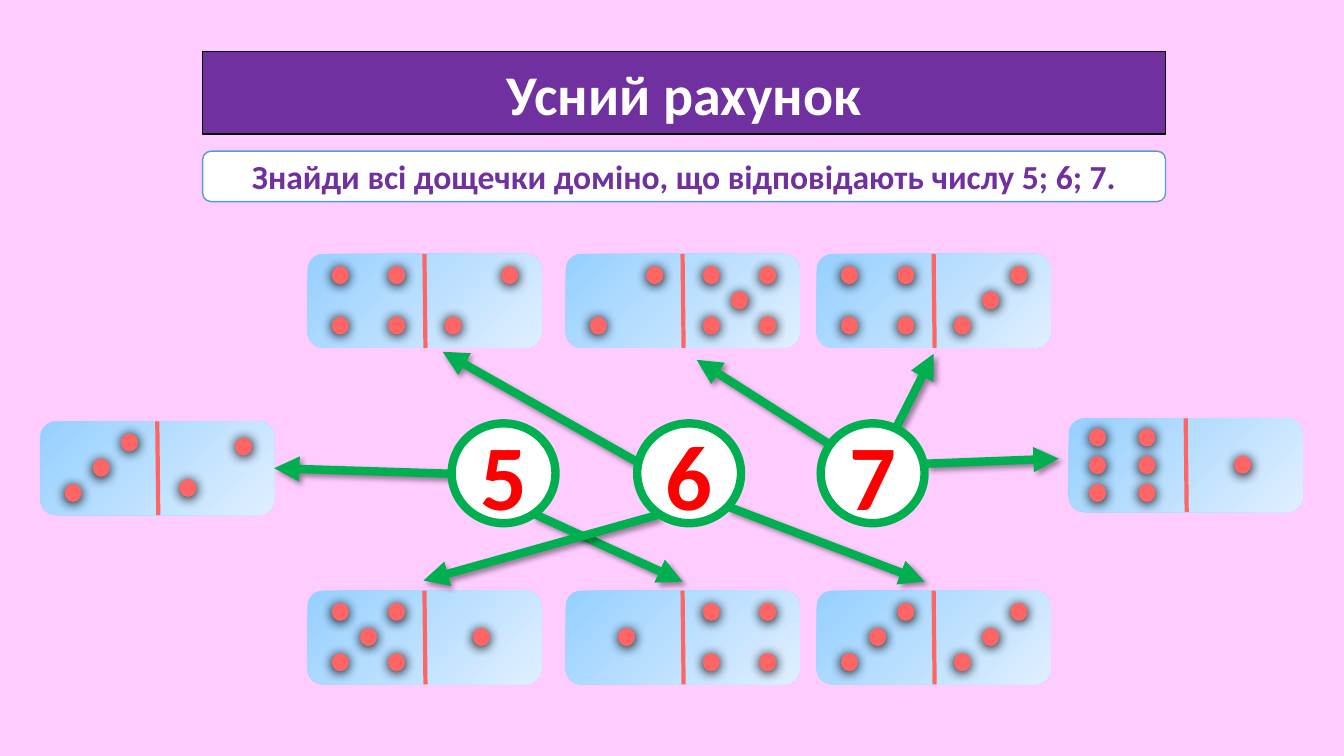
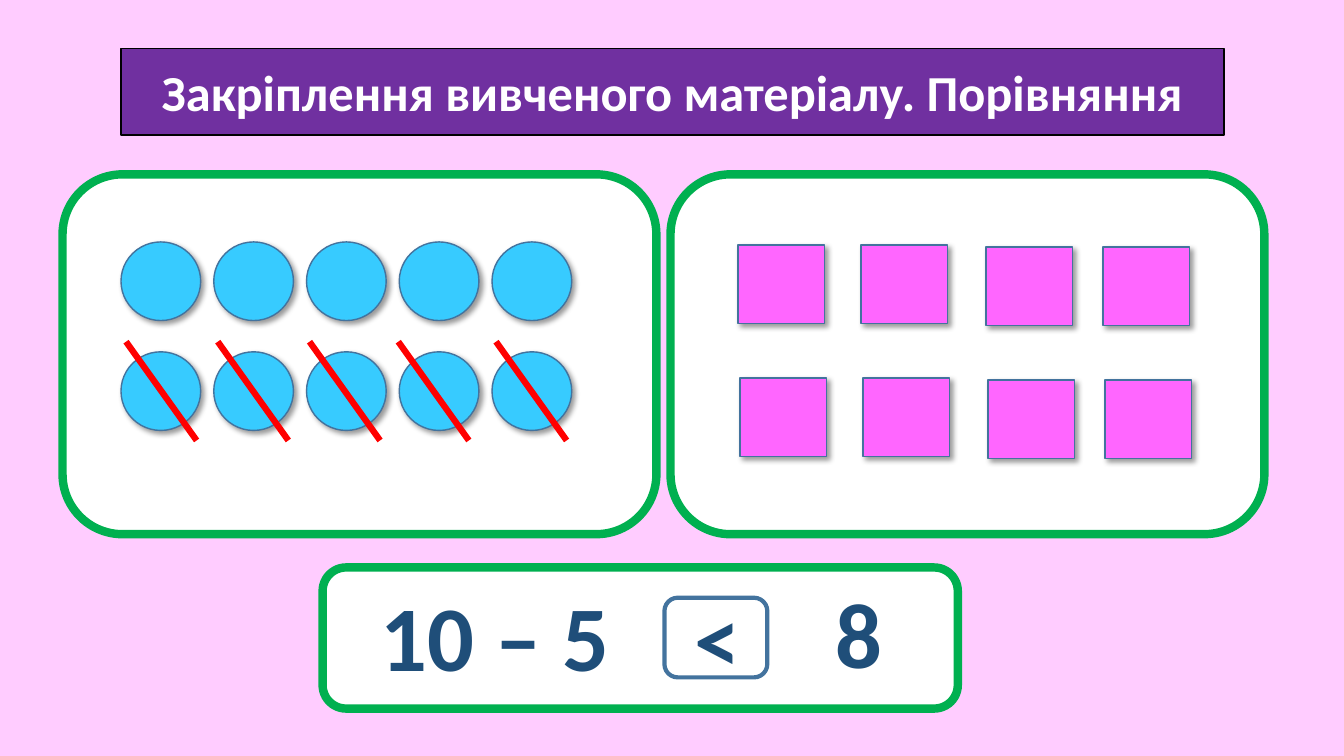
from itertools import product

from pptx import Presentation
from pptx.dml.color import RGBColor
from pptx.enum.shapes import MSO_CONNECTOR, MSO_SHAPE
from pptx.enum.text import MSO_ANCHOR, PP_ALIGN
from pptx.oxml import parse_xml
from pptx.oxml.ns import nsdecls, qn
from pptx.util import Inches, Pt

# Shared look
FONT = "Calibri"
COLORS = {
    "background": "FFCCFF", "purple": "7030A0", "white": "FFFFFF", "black": "000000",
    "green": "00B050", "red": "FF0000", "coral": "FF6565", "border": "5B9BD5",
    "outline": "43739E", "navy": "1F4E79", "sky": "37CBFF", "pink": "FF66FF",
    "tile_dark": "96D0FF", "tile_light": "E0EFFF",
}
# Shadows: opacity %, blur pt, distance pt, direction in degrees
GLOW = (100, 8.5, 1, 90)
DROP = (40, 4, 3, 45)

# Slide 1 content
COUNTING_TITLE = "Усний рахунок"
TASK = "Знайди всі дощечки доміно, що відповідають числу 5; 6; 7."
NUMBERS = [("5", 4.48), ("6", 6.32), ("7", 8.14)]

# Dots of a domino half as (column, row) on a 3 by 3 grid
DIAGONAL = [(0, 2), (2, 0)]
CORNERS = list(product((0, 2), (0, 2)))
FACES = {
    "1": [(1, 1)],
    "2": DIAGONAL,
    "2 close": [(0.07, 1.8), (2.04, 0.16)],
    "3": DIAGONAL + [(1, 1)],
    "4": CORNERS,
    "5": CORNERS + [(1, 1)],
    "6": list(product((-0.14, 1.61), (-0.08, 1.02, 2.12))),
}
TILE_COLUMNS = (3.05, 5.61, 8.1)
TILE_ROWS = {
    2.52: [("4", "2"), ("2", "5"), ("4", "3")],
    5.86: [("5", "1"), ("1", "4"), ("3", "3")],
}
SIDE_TILES = [(0.4, 4.18, "3", "2 close"), (10.6, 4.15, "6", "1")]
TILE_WIDTH, TILE_HEIGHT = 2.32, 0.93
DOT_WIDTH, DOT_HEIGHT = 0.17, 0.18
HALF_STARTS = (0.24, 1.36)
DOT_TOP, DOT_COLUMN_STEP, DOT_ROW_STEP = 0.12, 0.28, 0.25

ANSWER_ARROWS = [
    ((6.35, 4.6), (4.39, 3.49)), ((8.23, 4.41), (6.91, 3.57)),
    ((8.89, 4.24), (9.26, 3.51)), ((9.19, 4.6), (10.5, 4.55)),
    ((7.23, 5.03), (9.17, 5.77)), ((5.3, 5.1), (6.77, 5.77)),
    ((6.52, 5.11), (4.2, 5.76)),
]

# Slide 2 content
COMPARING_TITLE = "Закріплення вивченого матеріалу. Порівняння"
PANELS = [(0.62, 1.73, 5.89, 3.57), (6.65, 1.73, 5.89, 3.57), (3.2, 5.63, 6.3, 1.4)]
EXPRESSION = [
    ("10 – 5", (3.68, 5.7, 2.9, 1.21)),
    ("<", (6.79, 5.72, 0.62, 1.21)),
    ("8", (8.19, 5.67, 0.92, 1.21)),
]
CIRCLE_LEFT, CIRCLE_STEP, CIRCLE_ROWS = 1.2, 0.92, (2.4, 3.49)
STRIKE_LEFTS = (1.25, 2.16, 3.07, 3.95, 4.92)
SQUARE_COLUMNS = [(7.32, 0), (8.54, 0), (9.78, 0.02), (10.94, 0.02)]
SQUARE_ROWS = [(2.43, 0), (3.75, 0.02)]


def rgb(name):
    return RGBColor.from_string(COLORS[name])


def write_text(shape, text, size, color, align=PP_ALIGN.CENTER, anchor=MSO_ANCHOR.MIDDLE):
    frame = shape.text_frame
    frame.word_wrap = True
    frame.vertical_anchor = anchor
    frame.text = text
    paragraph = frame.paragraphs[0]
    paragraph.alignment = align
    font = paragraph.runs[0].font
    font.name, font.size, font.bold = FONT, Pt(size), True
    font.color.rgb = rgb(color)


def paint(shape, fill=None, line=None, width=1):
    if fill:
        shape.fill.solid()
        shape.fill.fore_color.rgb = rgb(fill)
    else:
        shape.fill.background()
    if line:
        shape.line.color.rgb = rgb(line)
        shape.line.width = Pt(width)
    else:
        shape.line.fill.background()


def set_shadow(shape, shadow=None):
    """Replace the theme shadow with the given one, or with none."""
    inner = ""
    if shadow:
        opacity, blur, distance, direction = shadow
        inner = (
            f'<a:outerShdw blurRad="{Pt(blur)}" dist="{Pt(distance)}" '
            f'dir="{direction * 60000}" algn="ctr" rotWithShape="0">'
            f'<a:srgbClr val="{COLORS["black"]}"><a:alpha val="{opacity * 1000}"/>'
            "</a:srgbClr></a:outerShdw>"
        )
    effects = parse_xml(f'<a:effectLst {nsdecls("a")}>{inner}</a:effectLst>')
    shape.element.spPr.append(effects)


def add_box(slide, kind, box, fill=None, line=None, width=1, shadow=None):
    shape = slide.shapes.add_shape(kind, *map(Inches, box))
    paint(shape, fill, line, width)
    set_shadow(shape, shadow)
    return shape


def add_line(slide, start, end, color, width, arrow=False, shadow=None):
    connector = slide.shapes.add_connector(
        MSO_CONNECTOR.STRAIGHT, *map(Inches, (*start, *end)))
    connector.line.color.rgb = rgb(color)
    connector.line.width = Pt(width)
    if arrow:
        tail = parse_xml(f'<a:tailEnd {nsdecls("a")} type="triangle"/>')
        connector.element.spPr.find(qn("a:ln")).append(tail)
    set_shadow(connector, shadow)
    return connector


def add_titled_slide(presentation, title, box, size):
    slide = presentation.slides.add_slide(presentation.slide_layouts[5])
    shape = slide.shapes.title
    shape.left, shape.top, shape.width, shape.height = map(Inches, box)
    paint(shape, "purple", "black")
    write_text(shape, title, size=size, color="white")
    return slide


def add_domino(slide, left, top, *faces):
    tile = add_box(slide, MSO_SHAPE.ROUNDED_RECTANGLE, (left, top, TILE_WIDTH, TILE_HEIGHT))
    tile.fill.gradient()
    tile.fill.gradient_angle = 315
    for stop, color in zip(tile.fill.gradient_stops, ("tile_dark", "tile_light")):
        stop.color.rgb = rgb(color)
    middle = left + TILE_WIDTH / 2
    add_line(slide, (middle, top), (middle + 0.01, top + TILE_HEIGHT), "coral", 3)
    for start, face in zip(HALF_STARTS, faces):
        for column, row in FACES[face]:
            dot = (left + start + column * DOT_COLUMN_STEP,
                   top + DOT_TOP + row * DOT_ROW_STEP, DOT_WIDTH, DOT_HEIGHT)
            add_box(slide, MSO_SHAPE.OVAL, dot, "coral", shadow=GLOW)
    return tile


def build_counting(presentation):
    slide = add_titled_slide(presentation, COUNTING_TITLE, (2.01, 0.51, 9.55, 0.82), 40)
    task = add_box(slide, MSO_SHAPE.ROUNDED_RECTANGLE, (2.01, 1.5, 9.55, 0.5),
                   "white", "border")
    write_text(task, TASK, size=24, color="purple")

    # Dominoes
    for top, tiles in TILE_ROWS.items():
        for left, faces in zip(TILE_COLUMNS, tiles):
            add_domino(slide, left, top, *faces)
    left_tile, _ = [add_domino(slide, *tile) for tile in SIDE_TILES]

    # Arrows from the numbers to their dominoes
    arrow = add_line(slide, (4.48, 4.7), (2.72, 4.68), "green", 6, True, DROP)
    arrow.end_connect(left_tile, 3)
    for start, end in ANSWER_ARROWS:
        add_line(slide, start, end, "green", 6, True, DROP)

    # Numbers
    for number, left in NUMBERS:
        circle = add_box(slide, MSO_SHAPE.OVAL, (left, 4.2, 1.03, 0.99), "white", "green", 6)
        write_text(circle, number, size=66, color="red")


def build_comparing(presentation):
    slide = add_titled_slide(presentation, COMPARING_TITLE, (1.2, 0.48, 10.94, 0.86), 36)
    for panel in PANELS:
        add_box(slide, MSO_SHAPE.ROUNDED_RECTANGLE, panel, "white", "green", 6)

    # Expression with its framed sign
    add_box(slide, MSO_SHAPE.ROUNDED_RECTANGLE, (6.59, 5.93, 1.02, 0.79),
            line="outline", width=3)
    for text, box in EXPRESSION:
        text_box = slide.shapes.add_textbox(*map(Inches, box))
        write_text(text_box, text, size=66, color="navy",
                   align=PP_ALIGN.LEFT, anchor=MSO_ANCHOR.TOP)

    # Circles, the second row struck out
    for top, column in product(CIRCLE_ROWS, range(len(STRIKE_LEFTS))):
        circle = (CIRCLE_LEFT + column * CIRCLE_STEP, top, 0.79, 0.78)
        add_box(slide, MSO_SHAPE.OVAL, circle, "sky", "outline", shadow=DROP)
    for left in STRIKE_LEFTS:
        add_line(slide, (left, 3.39), (left + 0.7, 4.37), "red", 4.5)

    # Squares
    for (top, shift), (left, drop) in product(SQUARE_ROWS, SQUARE_COLUMNS):
        square = (left + shift, top + drop, 0.86, 0.78)
        add_box(slide, MSO_SHAPE.RECTANGLE, square, "pink", "outline", shadow=DROP)


def main():
    presentation = Presentation()
    presentation.slide_width, presentation.slide_height = Inches(13.33), Inches(7.5)
    background = presentation.slide_master.background.fill
    background.solid()
    background.fore_color.rgb = rgb("background")
    build_counting(presentation)
    build_comparing(presentation)
    presentation.save("out.pptx")


if __name__ == "__main__":
    main()
